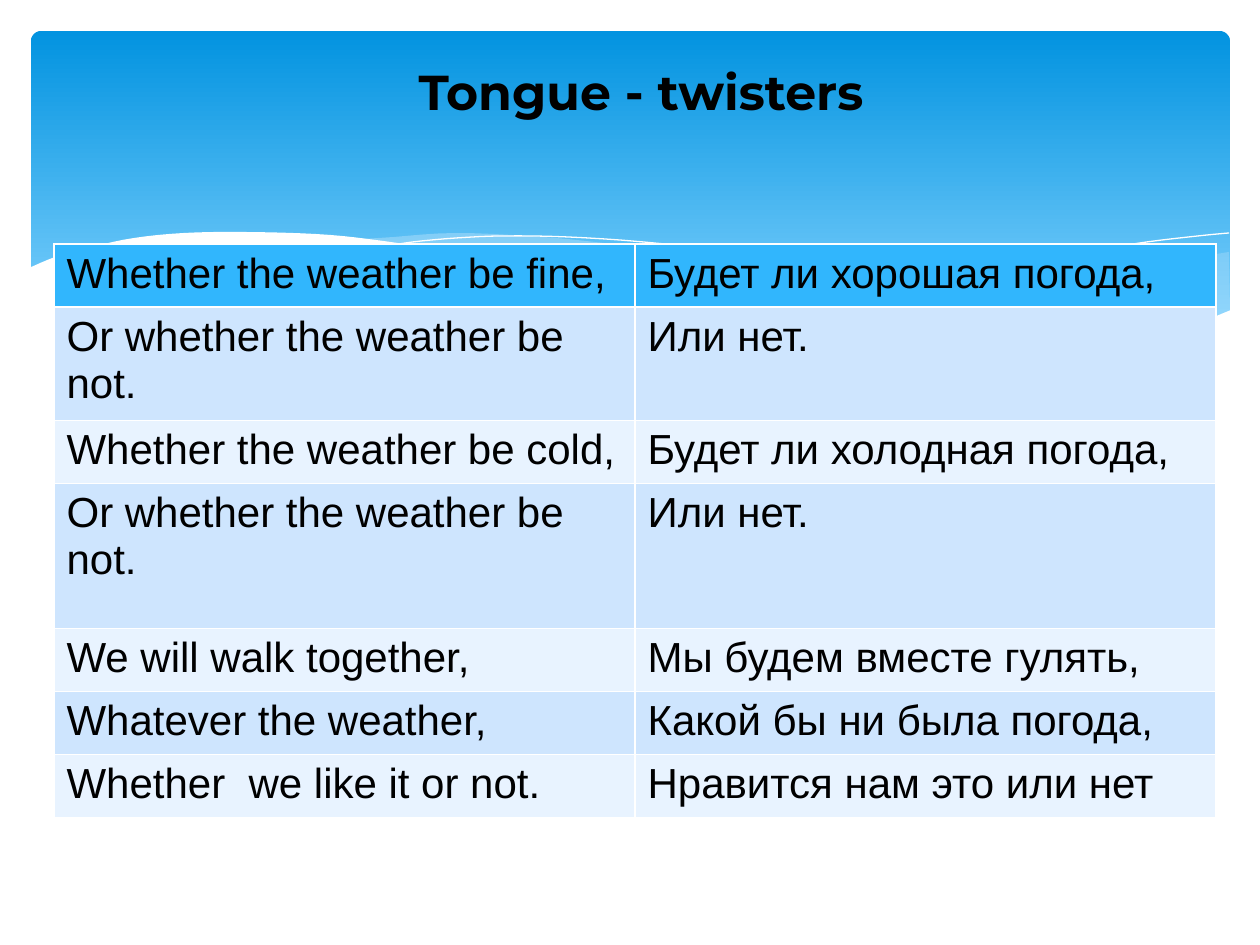
from lxml import etree
from pptx import Presentation
from pptx import util as u
from pptx.dml.color import RGBColor
from pptx.enum import shapes, text
from pptx.oxml.ns import qn

EMU_PER_PX = 914400 / 126
STEPS = 4

RIGHT_WAVE = [
    (1229, 252), (1178, 261), (1085, 281), (982, 305), (890, 324), (833, 334),
    (888, 341), (954, 348), (1026, 350), (1087, 346), (1140, 339), (1187, 326), (1230, 311),
]
MIDDLE_WAVE = [
    (1125, 344), (1055, 334), (976, 320), (890, 302), (793, 280), (717, 262),
    (648, 249), (586, 241), (529, 236), (455, 233), (394, 237), (360, 241),
    (431, 251), (509, 266), (566, 280), (668, 302), (757, 321), (838, 335),
    (910, 345), (974, 349), (1043, 350), (1092, 348), (1125, 344),
]
LEFT_CREST = [
    (389, 246), (413, 242), (457, 238), (505, 236), (567, 237), (643, 242),
    (733, 252), (838, 268), (958, 294), (1047, 316), (1143, 343),
]
RIGHT_CREST = [
    (772, 324), (823, 310), (876, 296), (942, 281), (1016, 265), (1091, 251),
    (1147, 242), (1198, 236), (1229, 233),
]
WHITE_WAVE = [
    (1231, 310), (1197, 323), (1147, 336), (1087, 345), (1019, 349), (937, 345),
    (842, 334), (730, 315), (634, 294), (563, 277), (493, 261), (428, 248),
    (368, 239), (315, 234), (243, 232), (184, 233), (134, 238), (96, 246),
    (58, 256), (29, 268),
]
WHITE_BASE = [(29, 415), (1231, 415)]

VERSES = [
    ("Whether the weather be fine,", "Будет ли хорошая погода,", 60),
    ("Or whether the weather be not.", "Или нет.", 106),
    ("Whether the weather be cold,", "Будет ли холодная погода,", 59),
    ("Or whether the weather be not.", "Или нет.", 145),
    ("We will walk together,", "Мы будем вместе гулять,", 59),
    ("Whatever the weather,", "Какой бы ни была погода,", 60),
    ("Whether  we like it or not.", "Нравится нам это или нет", 59),
]
HEADER_FILL = "31B6FD"
BAND_FILLS = ("E8F3FF", "CEE5FE")
TITLE_FORMAT = {"name": "Montserrat", "size": u.Pt(28), "bold": True}
VERSE_FORMAT = {"name": "Arial", "size": u.Pt(24), "bold": False}


def px(length):
    return u.Emu(round(length * EMU_PER_PX))


def color(hex_value):
    return RGBColor.from_string(hex_value)


def write(paragraph, words, font_format):
    run = paragraph.add_run()
    run.text = words
    for key, value in font_format.items():
        setattr(run.font, key, value)
    run.font.color.rgb = color("000000")


def smooth(knots):
    padded = [knots[0], *knots, knots[-1]]
    curve = [knots[0]]
    for before, start, end, after in zip(padded, padded[1:], padded[2:], padded[3:]):
        for step in range(1, STEPS + 1):
            t = step / STEPS
            curve.append(tuple(
                (2 * b + (c - a) * t + (2 * a - 5 * b + 4 * c - d) * t ** 2
                 + (3 * b - a - 3 * c + d) * t ** 3) / 2
                for a, b, c, d in zip(before, start, end, after)))
    return curve


def draw_outline(slide, points, close):
    start, *rest = [(px(x), px(y)) for x, y in points]
    builder = slide.shapes.build_freeform(*start, scale=1.0)
    builder.add_line_segments(rest, close=close)
    outline = builder.convert_to_shape()
    outline.shadow.inherit = False
    return outline


def add_wave(slide, points, fill, opacity=100):
    wave = draw_outline(slide, points, True)
    wave.fill.solid()
    wave.fill.fore_color.rgb = color(fill)
    wave.line.fill.background()
    if opacity < 100:
        tint = wave.fill._xPr.find(qn("a:solidFill"))[0]
        etree.SubElement(tint, qn("a:alpha"), val=str(opacity * 1000))


def add_crest(slide, knots):
    crest = draw_outline(slide, smooth(knots), False)
    crest.fill.background()
    crest.line.color.rgb = color("FFFFFF")
    crest.line.width = u.Pt(0)


def add_banner(slide):
    banner = slide.shapes.add_shape(
        shapes.MSO_SHAPE.ROUNDED_RECTANGLE, px(31), px(31), px(1199), px(340))
    banner.adjustments[0] = 0.03
    banner.shadow.inherit = False
    banner.line.fill.background()
    banner.fill.gradient()
    banner.fill.gradient_angle = 270
    stops = ((0, "0293E0"), (0.9, "83D3FE"))
    for stop, (position, shade) in zip(banner.fill.gradient_stops, stops):
        stop.position = position
        stop.color.rgb = color(shade)


def add_title(slide, words):
    title = slide.shapes.add_textbox(px(74), px(26), px(1134), px(129)).text_frame
    title.word_wrap = True
    title.vertical_anchor = text.MSO_ANCHOR.MIDDLE
    title.paragraphs[0].alignment = text.PP_ALIGN.CENTER
    write(title.paragraphs[0], words, TITLE_FORMAT)


def add_verses(slide):
    total = sum(height for *_, height in VERSES)
    verses = slide.shapes.add_table(
        len(VERSES), 2, px(54), px(244), px(1162), px(total)).table
    for index, (*lines, height) in enumerate(VERSES):
        verses.rows[index].height = px(height)
        for column, line in enumerate(lines):
            cell = verses.cell(index, column)
            cell.fill.solid()
            cell.fill.fore_color.rgb = color(BAND_FILLS[index % 2] if index else HEADER_FILL)
            write(cell.text_frame.paragraphs[0], line, VERSE_FORMAT)


def main():
    deck = Presentation()
    deck.slide_width, deck.slide_height = px(1260), px(945)
    slide = deck.slides.add_slide(deck.slide_layouts[6])
    add_banner(slide)
    add_wave(slide, smooth(RIGHT_WAVE), "C6E7FC", 29)
    add_wave(slide, smooth(MIDDLE_WAVE), "C6E7FC", 40)
    add_crest(slide, LEFT_CREST)
    add_crest(slide, RIGHT_CREST)
    add_wave(slide, smooth(WHITE_WAVE) + WHITE_BASE, "FFFFFF")
    add_title(slide, "Tongue - twisters")
    add_verses(slide)
    deck.save("out.pptx")


if __name__ == "__main__":
    main()
